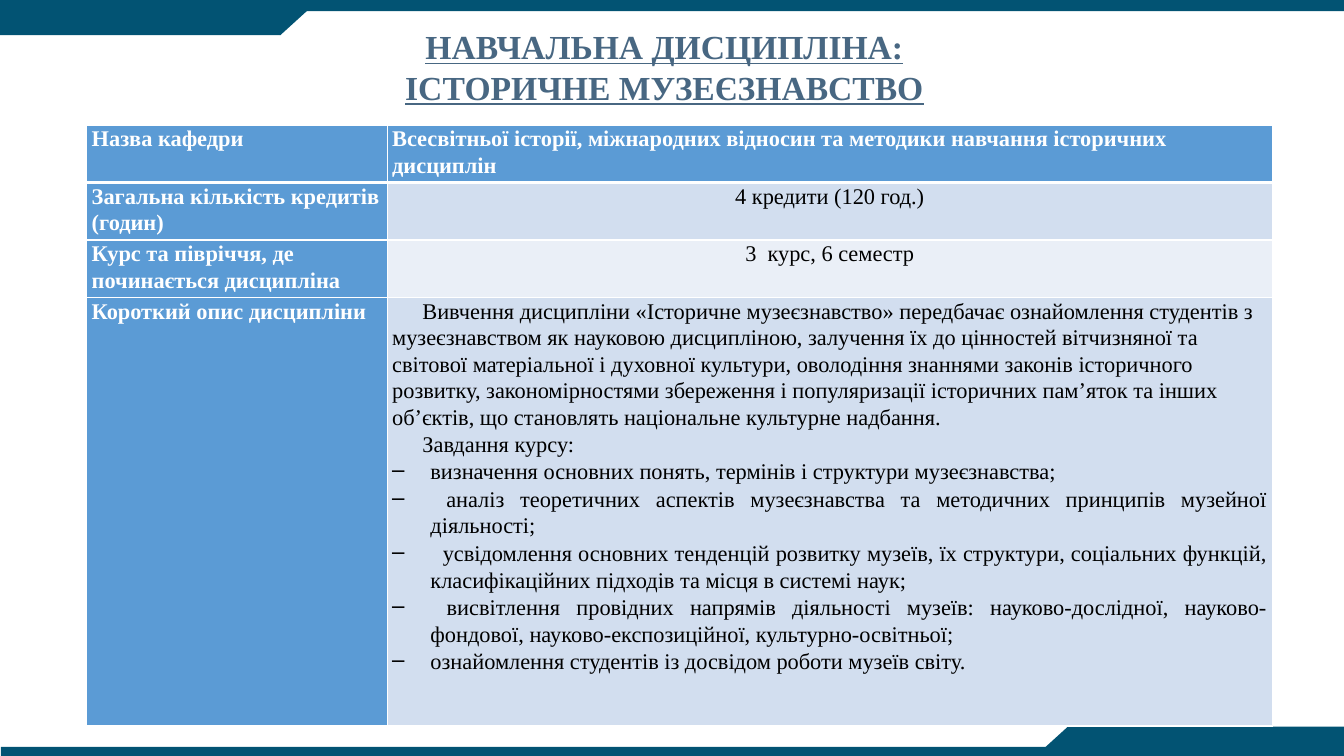
from dataclasses import dataclass

from lxml import etree
from pptx import Presentation
from pptx.dml.color import RGBColor
from pptx.enum.shapes import MSO_SHAPE
from pptx.enum.text import PP_ALIGN
from pptx.oxml.ns import qn
from pptx.util import Pt

PX = 9144  # EMU per px, 100 px to the inch
RECTANGLE, MERGE = MSO_SHAPE.RECTANGLE, MSO_SHAPE.FLOWCHART_MERGE
LEFT, CENTER, JUSTIFY = PP_ALIGN.LEFT, PP_ALIGN.CENTER, PP_ALIGN.JUSTIFY


@dataclass(frozen=True)
class Theme:
    font: str = "Times New Roman"
    title_size: int = 24
    body_size: int = 16
    frame: RGBColor = RGBColor(0x02, 0x53, 0x73)
    title: RGBColor = RGBColor(0x48, 0x67, 0x82)
    label: RGBColor = RGBColor(0x5B, 0x9B, 0xD5)
    band_dark: RGBColor = RGBColor(0xD2, 0xDE, 0xEF)
    band_light: RGBColor = RGBColor(0xEA, 0xEF, 0xF7)
    white: RGBColor = RGBColor(0xFF, 0xFF, 0xFF)
    black: RGBColor = RGBColor(0, 0, 0)


theme = Theme()


def style_paragraph(para, size, color, bold, align):
    para.alignment = align
    para.font.name = theme.font
    para.font.size = Pt(size)
    para.font.bold = bold
    para.font.color.rgb = color


def set_borders(cell, bottom_width):
    """Draw white 1 pt cell borders, with the bottom one as wide as given in points."""
    properties = cell._tc.get_or_add_tcPr()
    widths = {"a:lnL": 1, "a:lnR": 1, "a:lnT": 1, "a:lnB": bottom_width}
    for position, (side, width) in enumerate(widths.items()):
        line = etree.Element(qn(side), w=str(Pt(width)))
        fill = etree.SubElement(line, qn("a:solidFill"))
        etree.SubElement(fill, qn("a:srgbClr"), val=str(theme.white))
        properties.insert(position, line)


deck = Presentation()
deck.slide_width, deck.slide_height = 1333 * PX, 750 * PX
page = deck.slides.add_slide(deck.slide_layouts[6])

# Frame bars and corner tabs
frame_parts = [
    (RECTANGLE, 0, 0, 1333, 11, 0),
    (RECTANGLE, 1, 741, 1333, 11, 0),
    (RECTANGLE, 0, 5, 278, 30, 0),
    (MERGE, 245, 5, 66, 30, 0),
    (RECTANGLE, 1059, 721, 278, 30, 0),
    (MERGE, 1026, 721, 66, 30, 180),
]
for kind, left, top, width, height, rotation in frame_parts:
    part = page.shapes.add_shape(kind, left * PX, top * PX, width * PX, height * PX)
    part.rotation = rotation
    part.shadow.inherit = False
    part.fill.solid()
    part.fill.fore_color.rgb = theme.frame
    part.line.fill.background()

# Title
title_box = page.shapes.add_textbox(56 * PX, 21 * PX, 1206 * PX, 91 * PX)
title_box.text_frame.word_wrap = True
title_box.text_frame.text = "НАВЧАЛЬНА ДИСЦИПЛІНА:\nІСТОРИЧНЕ МУЗЕЄЗНАВСТВО"
for para in title_box.text_frame.paragraphs:
    style_paragraph(para, theme.title_size, theme.title, True, CENTER)
    para.font.underline = True

# Course table
description = [
    "Вивчення дисципліни «Історичне музеєзнавство» передбачає ознайомлення студентів з "
    "музеєзнавством як науковою дисципліною, залучення їх до цінностей вітчизняної та "
    "світової матеріальної і духовної культури, оволодіння знаннями законів історичного "
    "розвитку, закономірностями збереження і популяризації історичних пам’яток та інших "
    "об’єктів, що становлять національне культурне надбання.",
    "Завдання курсу:",
]
tasks = [
    "визначення основних понять, термінів і структури музеєзнавства;",
    " аналіз теоретичних аспектів музеєзнавства та методичних принципів музейної діяльності;",
    "  усвідомлення основних тенденцій розвитку музеїв, їх структури, соціальних функцій, "
    "класифікаційних підходів та місця в системі наук;",
    " висвітлення провідних напрямів діяльності музеїв: науково-дослідної, "
    "науково-фондової, науково-експозиційної, культурно-освітньої;",
    "ознайомлення студентів із досвідом роботи музеїв світу.",
]
course_rows = [
    ("Назва кафедри",
     "Всесвітньої історії, міжнародних відносин та методики навчання історичних дисциплін",
     theme.label, LEFT),
    ("Загальна кількість кредитів (годин)", "4 кредити (120 год.)", theme.band_dark, CENTER),
    ("Курс та півріччя, де починається дисципліна", "3  курс, 6 семестр",
     theme.band_light, CENTER),
    ("Короткий опис дисципліни", "\n".join(description + tasks), theme.band_dark, LEFT),
]
table = page.shapes.add_table(4, 2, 86 * PX, 124 * PX, 1176 * PX, 587 * PX).table
for column, width in zip(table.columns, (298, 878)):
    column.width = width * PX
for row, height in zip(table.rows, (54, 54, 54, 425)):
    row.height = height * PX

for row_index, (label, value, value_fill, value_align) in enumerate(course_rows):
    cells = [(label, theme.label, LEFT), (value, value_fill, value_align)]
    for column_index, (text, fill, align) in enumerate(cells):
        cell = table.cell(row_index, column_index)
        cell.text = text
        cell.margin_left = cell.margin_right = 5 * PX
        cell.margin_top = cell.margin_bottom = 0
        cell.fill.solid()
        cell.fill.fore_color.rgb = fill
        set_borders(cell, 3 if row_index == 0 else 1)
        is_label = fill == theme.label
        for para in cell.text_frame.paragraphs:
            para.line_spacing = 1.07
            style_paragraph(para, theme.body_size,
                            theme.white if is_label else theme.black, is_label, align)

# Indents and dashes of the description
description_paras = table.cell(3, 1).text_frame.paragraphs
for index, para in enumerate(description_paras):
    properties = para._p.get_or_add_pPr()
    if index > 0:
        para.alignment = JUSTIFY
    if index < len(description):
        properties.set("indent", str(30 * PX))
        continue
    para.space_before = Pt(0.7)
    properties.set("marL", str(38 * PX))
    properties.set("indent", str(-38 * PX))
    dash = etree.Element(qn("a:buChar"), char="–")
    properties.find(qn("a:defRPr")).addprevious(dash)

deck.save("out.pptx")
